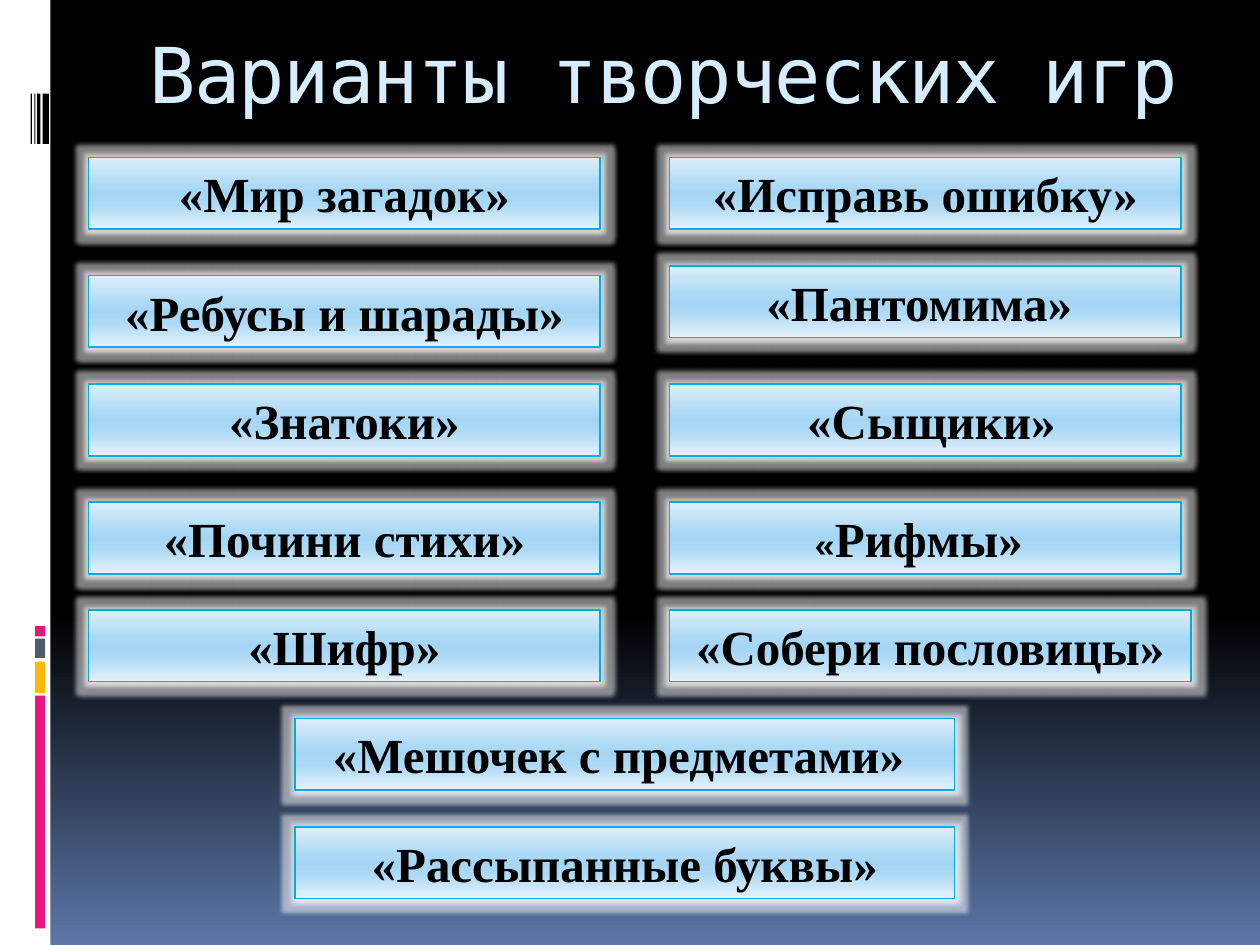
from dataclasses import dataclass

from lxml import etree
from pptx import Presentation
from pptx.dml.color import RGBColor
from pptx.enum.shapes import MSO_SHAPE
from pptx.enum.text import MSO_ANCHOR, MSO_AUTO_SIZE, PP_ALIGN
from pptx.oxml import parse_xml
from pptx.oxml.ns import nsdecls, qn
from pptx.util import Pt

RECT = MSO_SHAPE.RECTANGLE
TOP = MSO_ANCHOR.TOP
MIDDLE = MSO_ANCHOR.MIDDLE
CENTER = PP_ALIGN.CENTER
GROW = MSO_AUTO_SIZE.SHAPE_TO_FIT_TEXT


@dataclass(frozen=True)
class Theme:
    white: str = "FFFFFF"
    black: str = "000000"
    pink: str = "EA157A"
    yellow: str = "FEB80A"
    slate: str = "4E5B6F"
    title: str = "D6ECFF"
    border: str = "00ADDC"
    title_font: str = "DejaVu Sans Mono"
    game_font: str = "Times New Roman"
    quote_font: str = "Cabin"
    title_size: int = 44
    game_size: int = 28
    quote_size: int = 18
    sky: tuple = ((0, "000000"), (65, "000000"), (100, "5B77A8"))
    glass: tuple = ((0, "DEEEFA"), (40, "ACD9F5"), (50, "A4D6F4"),
                    (65, "ACD9F5"), (100, "E5F2FB"))


T = Theme()

# Content: (text, top) for each game, grouped by column
TITLE = "Варианты творческих игр"
LEFT_GAMES = [("«Мир загадок»", 90), ("«Ребусы и шарады»", 157.5),
              ("«Знатоки»", 219.5), ("«Почини стихи»", 287), ("«Шифр»", 348.5)]
RIGHT_GAMES = [("«Исправь ошибку»", 90), ("«Пантомима» ", 152),
               (" «Сыщики»", 219.5), ("«Рифмы» ", 287)]
WIDE_RIGHT_GAMES = [("«Собери пословицы»", 348.5)]
BOTTOM_GAMES = [("«Мешочек с предметами» ", 410.5), ("«Рассыпанные буквы»", 472.5)]
SMALL_QUOTE_GAME = "«Рифмы» "

# (left, width, games)
COLUMNS = [(50.5, 292.5, LEFT_GAMES), (382.5, 292.5, RIGHT_GAMES),
           (382.5, 298, WIDE_RIGHT_GAMES), (168.5, 377, BOTTOM_GAMES)]
GAME_HEIGHT = 41

# Side decoration: (top, height, colour) and (left, width)
BLOCKS = [(397.5, 133, T.pink), (378, 18, T.yellow),
          (365, 11, T.slate), (357.8, 5.8, T.pink)]
BARS = [(24.4, 3.6), (21.2, 1.9), (19.6, 0.7), (17.5, 0.7)]


def set_gradient(fill, element, stops):
    """Fill from top to bottom with (percent, colour) stops."""
    fill.gradient()
    fill.gradient_angle = 270
    stop_list = element.find(".//" + qn("a:gsLst"))
    for stop in list(stop_list):
        stop_list.remove(stop)
    for percent, colour in stops:
        stop = etree.SubElement(stop_list, qn("a:gs"), pos=str(percent * 1000))
        etree.SubElement(stop, qn("a:srgbClr"), val=colour)


def add_rect(s, left, top, width, height, colour=None):
    sp = s.shapes.add_shape(RECT, Pt(left), Pt(top), Pt(width), Pt(height))
    sp.shadow.inherit = False
    if colour:
        sp.fill.solid()
        sp.fill.fore_color.rgb = RGBColor.from_string(colour)
        sp.line.fill.background()
    return sp


def add_run(p, text, *, font, size, colour, bold=False):
    r = p.add_run()
    r.text = text
    r.font.name = font
    r.font.size = Pt(size)
    r.font.bold = bold
    r.font.color.rgb = RGBColor.from_string(colour)
    return r


def add_halo(sp):
    """Soft white glow with a faint shadow beneath."""
    effects = sp.element.spPr.find(qn("a:effectLst"))
    for tag, alpha, attributes in (
            ("glow", 50, f'rad="{Pt(5)}"'),
            ("outerShdw", 45, f'blurRad="{Pt(3)}" dist="{Pt(1)}" dir="5400000" rotWithShape="0"')):
        effects.append(parse_xml(
            f'<a:{tag} {nsdecls("a")} {attributes}><a:srgbClr val="{T.white}">'
            f'<a:alpha val="{alpha * 1000}"/></a:srgbClr></a:{tag}>'))


def add_game(s, text, left, top, width):
    sp = add_rect(s, left, top, width, GAME_HEIGHT)
    set_gradient(sp.fill, sp.element.spPr, T.glass)
    sp.line.color.rgb = RGBColor.from_string(T.border)
    sp.line.width = Pt(0.94)
    add_halo(sp)
    tf = sp.text_frame
    tf.word_wrap = True
    tf.auto_size = GROW
    tf.vertical_anchor = MIDDLE
    p = tf.paragraphs[0]
    p.alignment = CENTER
    if text == SMALL_QUOTE_GAME:
        add_run(p, text[0], font=T.quote_font, size=T.quote_size, colour=T.black, bold=True)
        text = text[1:]
    add_run(p, text, font=T.game_font, size=T.game_size, colour=T.black, bold=True)


def main():
    prs = Presentation()
    prs.slide_width, prs.slide_height = Pt(720), Pt(540)
    s = prs.slides.add_slide(prs.slide_layouts[5])
    set_gradient(s.background.fill, s.element, T.sky)

    # Side strip
    add_rect(s, 0, 0, 28.8, 540, T.white)
    for top, height, colour in BLOCKS:
        add_rect(s, 20, top, 5.8, height, colour)
    for left, width in BARS:
        add_rect(s, left, 53.5, width, 28.8, T.black)

    # Title
    title = s.shapes.title
    title.left, title.top, title.width, title.height = Pt(73.5), Pt(11.5), Pt(612), Pt(72)
    tf = title.text_frame
    tf.vertical_anchor = TOP
    p = tf.paragraphs[0]
    p.alignment = CENTER
    r = add_run(p, TITLE, font=T.title_font, size=T.title_size, colour=T.title)
    r.font._element.set("spc", "-100")

    # Games
    for left, width, games in COLUMNS:
        for text, top in games:
            add_game(s, text, left, top, width)

    prs.save("out.pptx")


if __name__ == "__main__":
    main()
